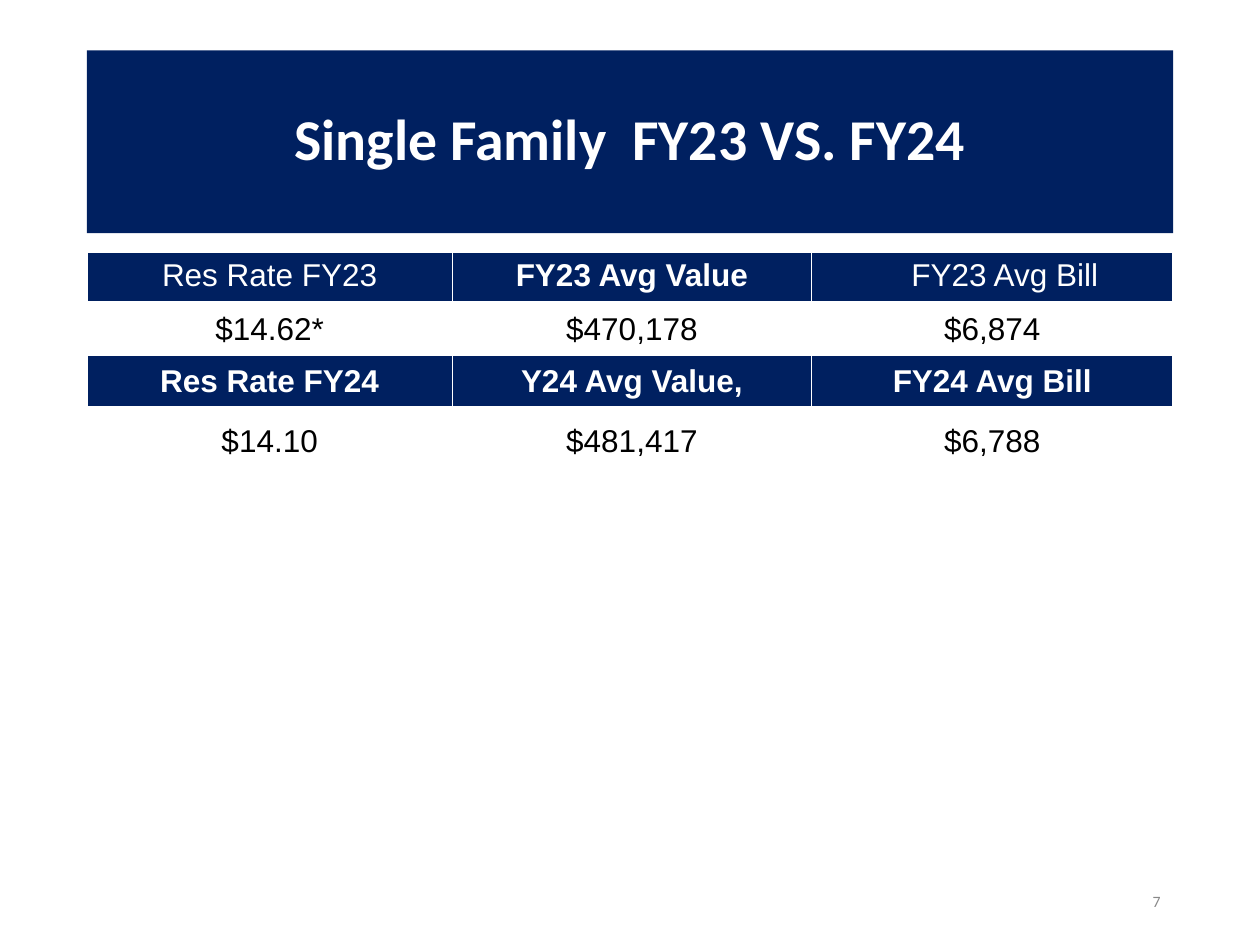
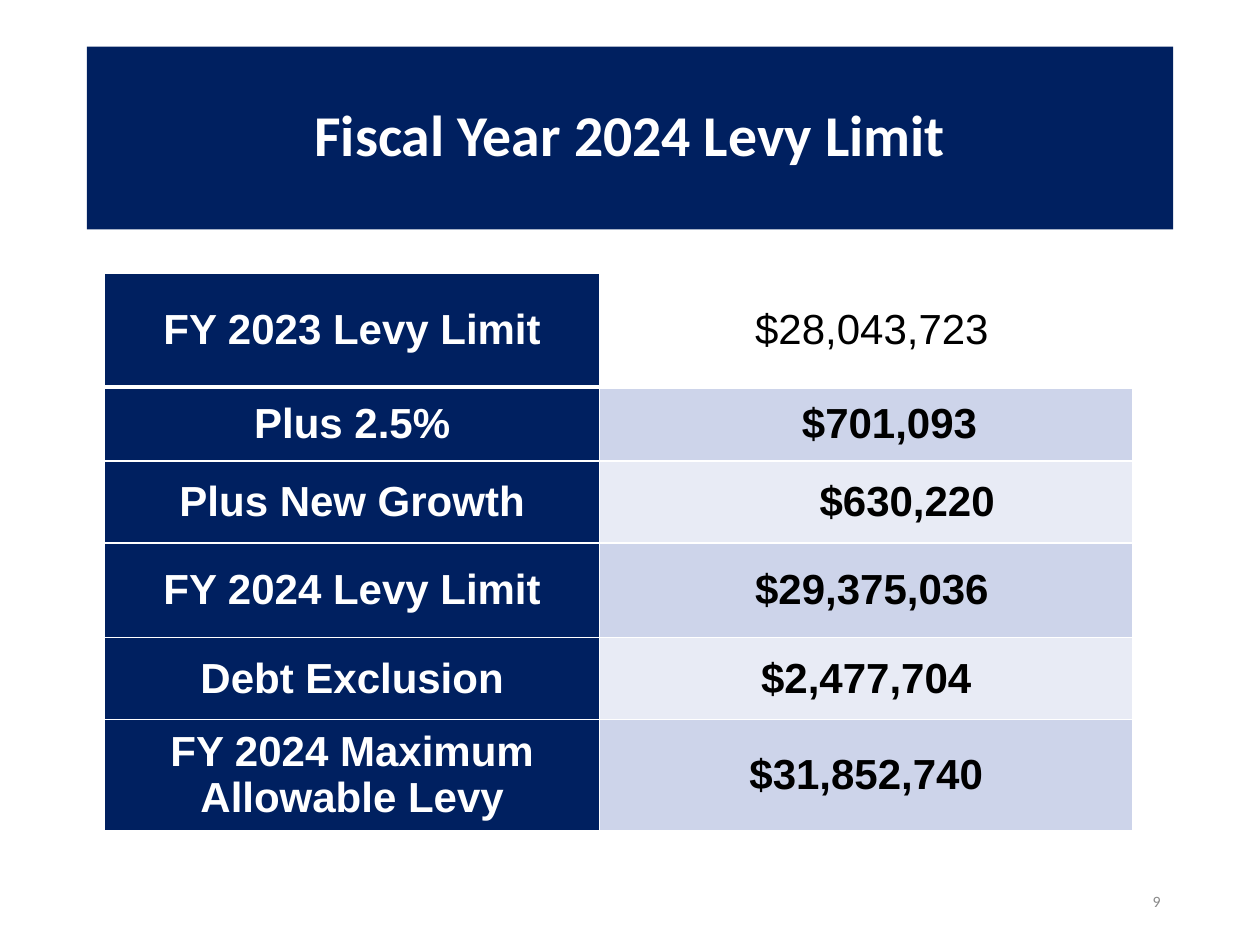
from lxml.etree import SubElement
from pptx import Presentation
from pptx.dml.color import RGBColor
from pptx.enum.text import MSO_ANCHOR, MSO_AUTO_SIZE, PP_ALIGN
from pptx.oxml.ns import qn
from pptx.util import Inches, Pt

NAVY = RGBColor(0x00, 0x20, 0x60)
WHITE = RGBColor(0xFF, 0xFF, 0xFF)
BLACK = RGBColor(0x00, 0x00, 0x00)
GREY = RGBColor(0x88, 0x88, 0x88)
BLUE_BAND = RGBColor(0xCD, 0xD4, 0xEA)
PALE_BAND = RGBColor(0xE8, 0xEB, 0xF5)

TITLE_ONLY = 5
BAND_LEFT, BAND_WIDTH, BAND_HEIGHT = 0.69, 8.62, 1.45
CELL_MARGIN = 0.1

TITLE_FONT = {"name": "Calibri", "size": Pt(33), "bold": True}
NUMBER_FONT = {"name": "Calibri", "size": Pt(9), "bold": False}
RATE_FONT = {"name": "Arial", "size": Pt(18)}
LEVY_FONT = {"name": "Arial", "size": Pt(24)}


def write(frame, text, font, color, align=PP_ALIGN.CENTER):
    frame.text = text
    paragraph = frame.paragraphs[0]
    paragraph.alignment = align
    run_font = paragraph.runs[0].font
    for attribute, value in font.items():
        setattr(run_font, attribute, value)
    run_font.color.rgb = color
    return paragraph


def add_title_band(slide, text, top):
    title = slide.shapes.title
    box = {"left": BAND_LEFT, "top": top, "width": BAND_WIDTH, "height": BAND_HEIGHT}
    for attribute, value in box.items():
        setattr(title, attribute, Inches(value))
    title.fill.solid()
    title.fill.fore_color.rgb = NAVY
    frame = title.text_frame
    frame.vertical_anchor = MSO_ANCHOR.MIDDLE
    write(frame, text, TITLE_FONT, WHITE).line_spacing = 0.9
    frame.auto_size = MSO_AUTO_SIZE.NONE


def add_page_number(slide, number):
    box = slide.shapes.add_textbox(Inches(7.06), Inches(6.95), Inches(2.25), Inches(0.4))
    box.text_frame.word_wrap = True
    box.text_frame.vertical_anchor = MSO_ANCHOR.MIDDLE
    write(box.text_frame, str(number), NUMBER_FONT, GREY, PP_ALIGN.RIGHT)


def add_cell_borders(cell, top, bottom):
    """Draw white borders; top and bottom are widths in points."""
    properties = cell._tc.get_or_add_tcPr()
    for side, width in {"lnL": 1, "lnR": 1, "lnT": top, "lnB": bottom}.items():
        line = SubElement(properties, qn(f"a:{side}"), w=str(Pt(width)))
        SubElement(SubElement(line, qn("a:solidFill")), qn("a:srgbClr"), val=str(WHITE))


def format_cell(cell, text, font, fill, bold, indent=0):
    cell.fill.solid()
    cell.fill.fore_color.rgb = fill
    cell.vertical_anchor = MSO_ANCHOR.MIDDLE
    cell.margin_left = Inches(CELL_MARGIN + indent)
    write(cell.text_frame, text, {**font, "bold": bold}, WHITE if fill == NAVY else BLACK)


def add_grid(slide, left, top, widths, heights):
    """Add a table with a thick rule below its first row."""
    table = slide.shapes.add_table(
        len(heights), len(widths), Inches(left), Inches(top),
        Inches(sum(widths)), Inches(sum(heights))).table
    for column, width in zip(table.columns, widths):
        column.width = Inches(width)
    for index, (row, height) in enumerate(zip(table.rows, heights)):
        row.height = Inches(height)
        for cell in row.cells:
            add_cell_borders(cell, 3 if index == 1 else 1, 3 if index == 0 else 1)
    return table


def add_rate_table(slide, left, top):
    rates = [
        ["Res Rate FY23", "FY23 Avg Value", "FY23 Avg Bill"],
        ["$14.62*", "$470,178", "$6,874"],
        ["Res Rate FY24", "Y24 Avg Value,", "FY24 Avg Bill"],
        ["$14.10", "$481,417", "$6,788"],
    ]
    bold_labels = {"FY23 Avg Value", *rates[2]}
    table = add_grid(slide, left, top, [2.9, 2.85, 2.87], [0.41, 0.41, 0.41, 0.55])
    for r, row in enumerate(rates):
        for c, text in enumerate(row):
            format_cell(table.cell(r, c), text, RATE_FONT, WHITE if r % 2 else NAVY,
                        text in bold_labels, 0.2 if (r, c) == (0, 2) else 0)
    for cell in table.rows[0].cells:
        cell.vertical_anchor = MSO_ANCHOR.TOP


def add_levy_table(slide, left, top):
    # label, amount, indent of the amount, row height
    levies = [
        ("FY 2023 Levy Limit", "$28,043,723", 0.09, 0.9),
        ("Plus 2.5%", "$701,093", 0.37, 0.59),
        ("Plus New Growth", "$630,220", 0.65, 0.65),
        ("FY 2024 Levy Limit", "$29,375,036", 0.09, 0.75),
        ("Debt Exclusion", "$2,477,704", 0, 0.65),
        ("FY 2024 Maximum Allowable Levy", "$31,852,740", 0, 0.88),
    ]
    table = add_grid(slide, left, top, [3.93, 4.23], [levy[-1] for levy in levies])
    for r, (label, amount, indent, _) in enumerate(levies):
        band = WHITE if r == 0 else BLUE_BAND if r % 2 else PALE_BAND
        format_cell(table.cell(r, 0), label, LEVY_FONT, NAVY, True)
        format_cell(table.cell(r, 1), amount, LEVY_FONT, band, r > 0, indent)


def add_table_slide(deck, title, title_top, add_table, left, top, number):
    slide = deck.slides.add_slide(deck.slide_layouts[TITLE_ONLY])
    add_title_band(slide, title, title_top)
    add_table(slide, left, top)
    add_page_number(slide, number)


def main():
    deck = Presentation()
    deck.slide_width, deck.slide_height = Inches(10), Inches(7.5)
    add_table_slide(deck, "Single Family  FY23 VS. FY24", 0.4,
                    add_rate_table, BAND_LEFT, 2, 7)
    add_table_slide(deck, "Fiscal Year 2024 Levy Limit", 0.37,
                    add_levy_table, 0.83, 2.17, 9)
    deck.save("out.pptx")


if __name__ == "__main__":
    main()
